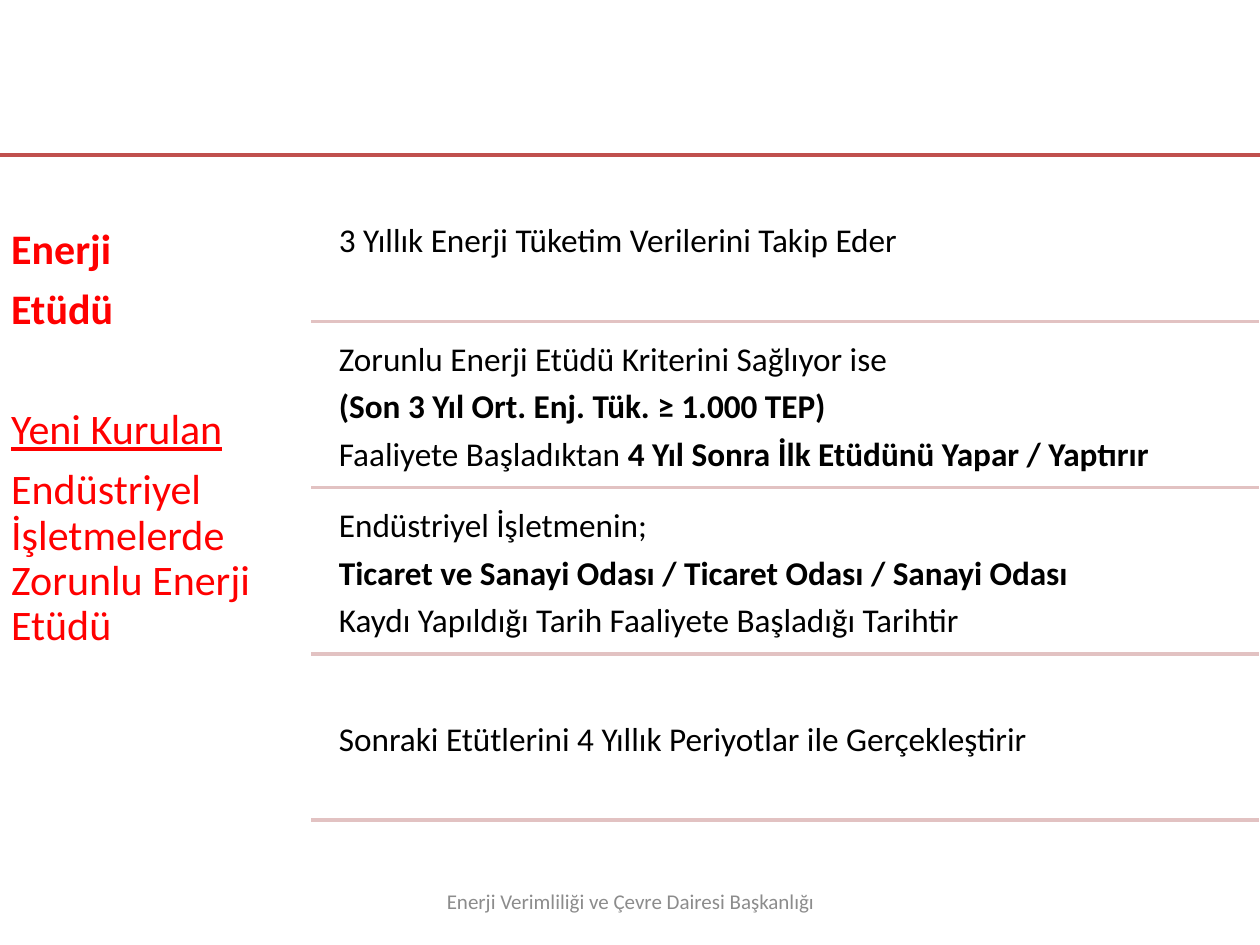
import pptx
import pptx.dml.color
import pptx.enum.shapes
import pptx.enum.text
import pptx.oxml.ns
import pptx.util
from lxml import etree

Inches = pptx.util.Inches
Pt = pptx.util.Pt
RGBColor = pptx.dml.color.RGBColor
ALIGN = pptx.enum.text.PP_ALIGN
ANCHOR = pptx.enum.text.MSO_ANCHOR

RED = RGBColor(0xFF, 0x00, 0x00)
BRICK = RGBColor(0xC0, 0x50, 0x4D)
PINK = RGBColor(0xE2, 0xC2, 0xC2)
BLACK = RGBColor(0x00, 0x00, 0x00)
GRAY = RGBColor(0x8C, 0x8C, 0x8C)

TOPIC = [
    [("Enerji", "b")],
    [("Etüdü", "b")],
    [("Yeni Kurulan", "u")],
    [("Endüstriyel İşletmelerde Zorunlu Enerji Etüdü", "")],
]
STEPS = [
    [[("3 Yıllık Enerji Tüketim Verilerini Takip Eder", "")]],
    [
        [("Zorunlu Enerji Etüdü Kriterini Sağlıyor ise", "")],
        [("(Son 3 Yıl Ort. Enj. Tük. ≥ 1.000 TEP)", "b")],
        [("Faaliyete Başladıktan ", ""),
         ("4 Yıl Sonra İlk Etüdünü Yapar / Yaptırır", "b")],
    ],
    [
        [("Endüstriyel İşletmenin;", "")],
        [("Ticaret ve Sanayi Odası / Ticaret Odası / Sanayi Odası", "b")],
        [("Kaydı Yapıldığı Tarih Faaliyete Başladığı Tarihtir", "")],
    ],
    [[("Sonraki Etütlerini 4 Yıllık Periyotlar ile Gerçekleştirir", "")]],
]
FOOTER = [[("Enerji Verimliliği ve Çevre Dairesi Başkanlığı", "")]]


def add_text(slide, box, paras, size, color, pad, anchor=ANCHOR.MIDDLE):
    """Add a text box and return its text frame."""
    frame = slide.shapes.add_textbox(*map(Inches, box)).text_frame
    frame.word_wrap = True
    frame.vertical_anchor = anchor
    frame.margin_left = frame.margin_right = Inches(pad)
    frame.margin_top = frame.margin_bottom = Inches(pad)
    for num, runs in enumerate(paras):
        para = frame.add_paragraph() if num else frame.paragraphs[0]
        para.line_spacing = 0.9
        para.space_after = Pt(round(size * 0.35, 1))
        for text, style in runs:
            run = para.add_run()
            run.text = text
            font = run.font
            font.name = "Calibri"
            font.size = Pt(size)
            font.color.rgb = color
            font.bold = "b" in style
            font.underline = "u" in style
    return frame


def add_rule(slide, left, top, width, color):
    """Add a flat horizontal line."""
    line = slide.shapes.add_connector(
        pptx.enum.shapes.MSO_CONNECTOR.STRAIGHT,
        Inches(left), Inches(top), Inches(left + width), Inches(top))
    line.line.color.rgb = color
    line.line.width = Pt(2)
    props = line._element.spPr
    etree.SubElement(props, pptx.oxml.ns.qn("a:effectLst"))


def add_topic(slide, left, top, width, height):
    """Add the topic column."""
    frame = add_text(slide, (left, top, width, height), TOPIC, 24, RED, 0.1,
                     ANCHOR.TOP)
    frame.margin_top = Inches(0.58)
    frame.paragraphs[2].space_before = Pt(34.5)


def add_steps(slide, left, top, width, pitch):
    """Add the steps, each closed by a line."""
    gap, inset = 0.06, 0.14
    for num, paras in enumerate(STEPS):
        start = top + num * pitch
        box = left + inset, start + gap, width - inset, pitch - gap
        add_text(slide, box, paras, 19, BLACK, 0.08)
        add_rule(slide, left, start + pitch, width, PINK)


def add_footer(slide, left, top, width, height):
    """Add the centred footer."""
    frame = add_text(slide, (left, top, width, height), FOOTER, 12, GRAY, 0.05)
    para = frame.paragraphs[0]
    para.alignment = ALIGN.CENTER
    para.line_spacing = 1.0
    para.space_after = Pt(0)


def main():
    """Build and save the slide."""
    deck = pptx.Presentation()
    deck.slide_width = Inches(10)
    deck.slide_height = Inches(7.5)
    slide = deck.slides.add_slide(deck.slide_layouts[6])
    add_footer(slide, 3.42, 6.95, 3.17, 0.4)
    add_rule(slide, -0.01, 1.23, 10.01, BRICK)
    add_topic(slide, -0.01, 1.23, 2.48, 5.35)
    add_steps(slide, 2.47, 1.23, 7.52, 1.32)
    deck.save("out.pptx")


if __name__ == "__main__":
    main()
